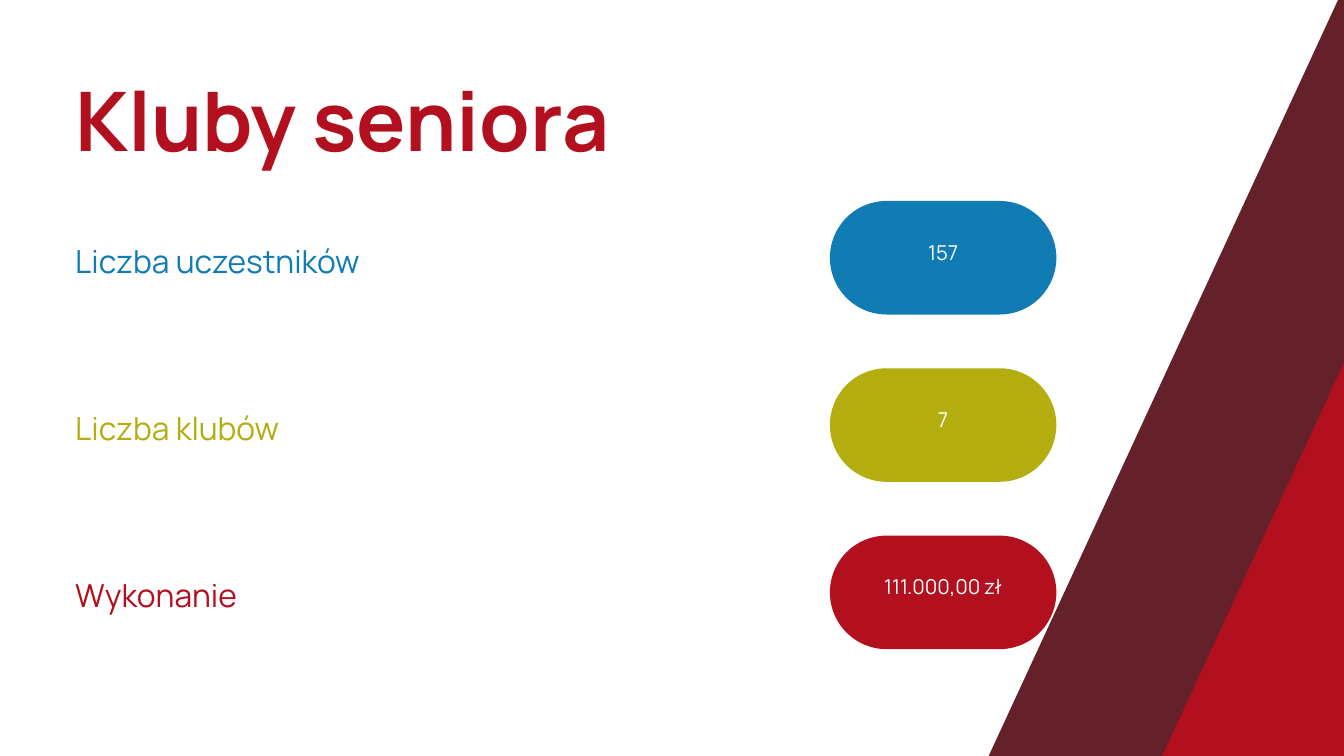
import pptx
import pptx.util
import pptx.dml.color
import pptx.enum.shapes
import pptx.enum.text
from dataclasses import dataclass

Inches = pptx.util.Inches
Pt = pptx.util.Pt
RGBColor = pptx.dml.color.RGBColor
Shape = pptx.enum.shapes.MSO_SHAPE
Align = pptx.enum.text.PP_ALIGN
Anchor = pptx.enum.text.MSO_ANCHOR


@dataclass
class Theme:
    font: str = "Manrope"
    blue: str = "107CB3"
    olive: str = "B3AD10"
    red: str = "B2101F"
    maroon: str = "65212A"
    white: str = "FFFFFF"
    title_size: float = 88
    label_size: float = 34
    value_size: float = 22


theme = Theme()


def write(shape, text, size, color, spacing, insets=(0, 0, 0, 0), bold=False):
    frame = shape.text_frame
    frame.word_wrap = True
    frame.margin_left, frame.margin_top, frame.margin_right, frame.margin_bottom = map(Inches, insets)
    paragraph = frame.paragraphs[0]
    paragraph.text = text
    paragraph.line_spacing = Pt(spacing)
    paragraph.font.name = theme.font
    paragraph.font.size = Pt(size)
    paragraph.font.bold = bold
    paragraph.font.color.rgb = RGBColor.from_string(color)


def add_filled(kind, left, top, width, height, color):
    shape = slide.shapes.add_shape(kind, Inches(left), Inches(top), Inches(width), Inches(height))
    shape.shadow.inherit = False
    shape.fill.solid()
    shape.fill.fore_color.rgb = RGBColor.from_string(color)
    shape.line.fill.background()
    return shape


presentation = pptx.Presentation()
presentation.slide_width = Inches(20)
presentation.slide_height = Inches(11.25)
slide = presentation.slides.add_slide(presentation.slide_layouts[6])

title = slide.shapes.add_textbox(Inches(1.12), Inches(1.03), Inches(17.75), Inches(1.49))
write(title, "Kluby seniora", theme.title_size, theme.red, 105.6, bold=True)

for left, top, width, height, color in [
    (10.18, 4.3, 17.01, 2.38, theme.maroon),
    (14.04, 3.19, 17.07, 4.86, theme.red),
]:
    stripe = add_filled(Shape.RECTANGLE, left, top, width, height, color)
    stripe.rotation = 294.8

figures = [
    ("Liczba uczestników", "157", theme.blue),
    ("Liczba klubów", "7", theme.olive),
    ("Wykonanie", "111.000,00 zł", theme.red),
]
first_top, row_pitch = 2.99, 2.49

for row, (label_text, value_text, color) in enumerate(figures):
    top = first_top + row * row_pitch

    label = slide.shapes.add_textbox(Inches(1.12), Inches(top + 0.51), Inches(10.04), Inches(0.67))
    write(label, label_text, theme.label_size, color, 47.6)

    pill = add_filled(Shape.ROUNDED_RECTANGLE, 12.35, top, 3.37, 1.69, color)
    pill.adjustments[0] = 0.5
    write(pill, value_text, theme.value_size, theme.white, 30.8, insets=(0.06, 0.06, 0.06, 0.29))
    pill.text_frame.vertical_anchor = Anchor.MIDDLE
    pill.text_frame.paragraphs[0].alignment = Align.CENTER

presentation.save("out.pptx")
